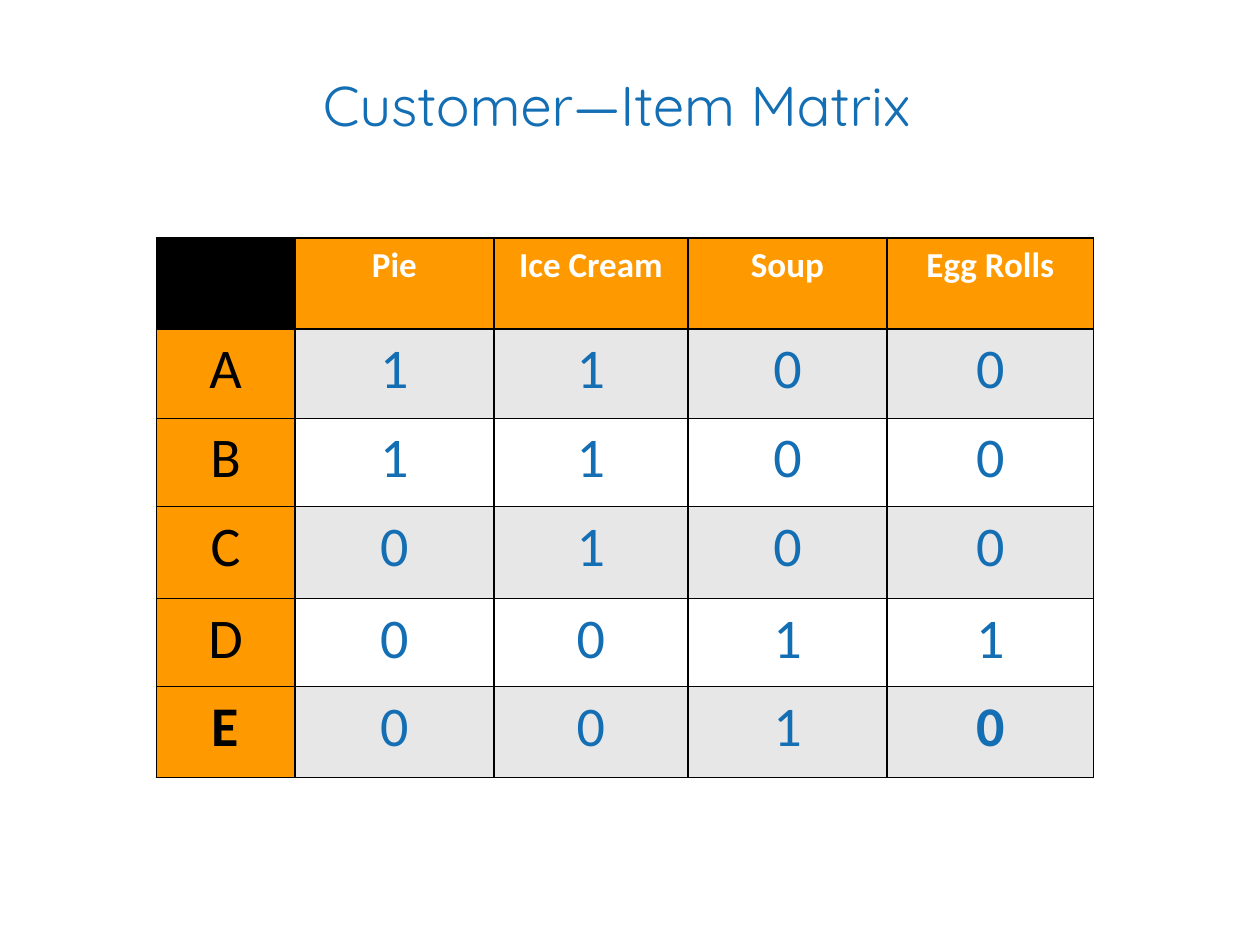
from lxml import etree
from pptx import Presentation
from pptx.dml.color import RGBColor
from pptx.enum.text import MSO_ANCHOR, MSO_AUTO_SIZE, PP_ALIGN
from pptx.oxml.ns import qn
from pptx.util import Inches, Pt

CENTER = PP_ALIGN.CENTER
TOP = MSO_ANCHOR.TOP
FIXED = MSO_AUTO_SIZE.NONE

COLORS = {
    "blue": "146EB4",
    "orange": "FF9900",
    "gray": "E7E7E7",
    "white": "FFFFFF",
    "black": "000000",
}
WIDTHS = [1.1, 1.58, 1.54, 1.58, 1.64]
HEIGHTS = [0.72, 0.71, 0.7, 0.73, 0.7, 0.72]
ROWS = [
    ["", "Pie", "Ice Cream", "Soup", "Egg Rolls"],
    ["A", "1", "1", "0", "0"],
    ["B", "1", "1", "0", "0"],
    ["C", "0", "1", "0", "0"],
    ["D", "0", "0", "1", "1"],
    ["E", "0", "0", "1", "0"],
]
BOLD = {(5, 0), (5, 4)}


def rgb(name):
    return RGBColor.from_string(COLORS[name])


def set_text(frame, text, font, size, color, bold=False):
    frame.text = text
    para = frame.paragraphs[0]
    para.alignment = CENTER
    para.font.name = font
    para.font.size = Pt(size)
    para.font.bold = bold
    para.font.color.rgb = rgb(color)


def add_title(slide, text):
    title = slide.shapes.title
    title.left, title.top = Inches(0.2), Inches(0.51)
    title.width, title.height = Inches(9.39), Inches(0.95)
    frame = title.text_frame
    frame.auto_size = FIXED
    frame.vertical_anchor = TOP
    set_text(frame, text, "Quicksand", 32, "blue")
    frame.paragraphs[0].space_before = Pt(0)


def set_border(cell):
    props = cell._tc.get_or_add_tcPr()
    for spot, side in enumerate(("lnL", "lnR", "lnT", "lnB")):
        line = etree.Element(qn(f"a:{side}"), w=str(Pt(1)))
        fill = etree.SubElement(line, qn("a:solidFill"))
        etree.SubElement(fill, qn("a:srgbClr"), val=COLORS["black"])
        props.insert(spot, line)


def pick_style(row, col):
    if row == 0:
        return ("orange" if col else "black"), "white", 20
    if col == 0:
        return "orange", "black", 32
    return ("gray" if row % 2 else "white"), "blue", 32


def add_matrix(slide):
    frame = slide.shapes.add_table(
        len(ROWS), len(WIDTHS), Inches(1.24), Inches(1.89),
        Inches(sum(WIDTHS)), Inches(sum(HEIGHTS)))
    table = frame.table
    for col, width in zip(table.columns, WIDTHS):
        col.width = Inches(width)
    for row, height in zip(table.rows, HEIGHTS):
        row.height = Inches(height)
    for r, texts in enumerate(ROWS):
        for c, text in enumerate(texts):
            cell = table.cell(r, c)
            fill, color, size = pick_style(r, c)
            cell.fill.solid()
            cell.fill.fore_color.rgb = rgb(fill)
            set_border(cell)
            if text:
                bold = r == 0 or (r, c) in BOLD
                set_text(cell.text_frame, text, "Calibri", size, color, bold)


def main():
    deck = Presentation()
    deck.slide_width, deck.slide_height = Inches(10), Inches(7.5)
    slide = deck.slides.add_slide(deck.slide_layouts[5])
    add_matrix(slide)
    add_title(slide, "Customer—Item Matrix")
    deck.save("out.pptx")


if __name__ == "__main__":
    main()
